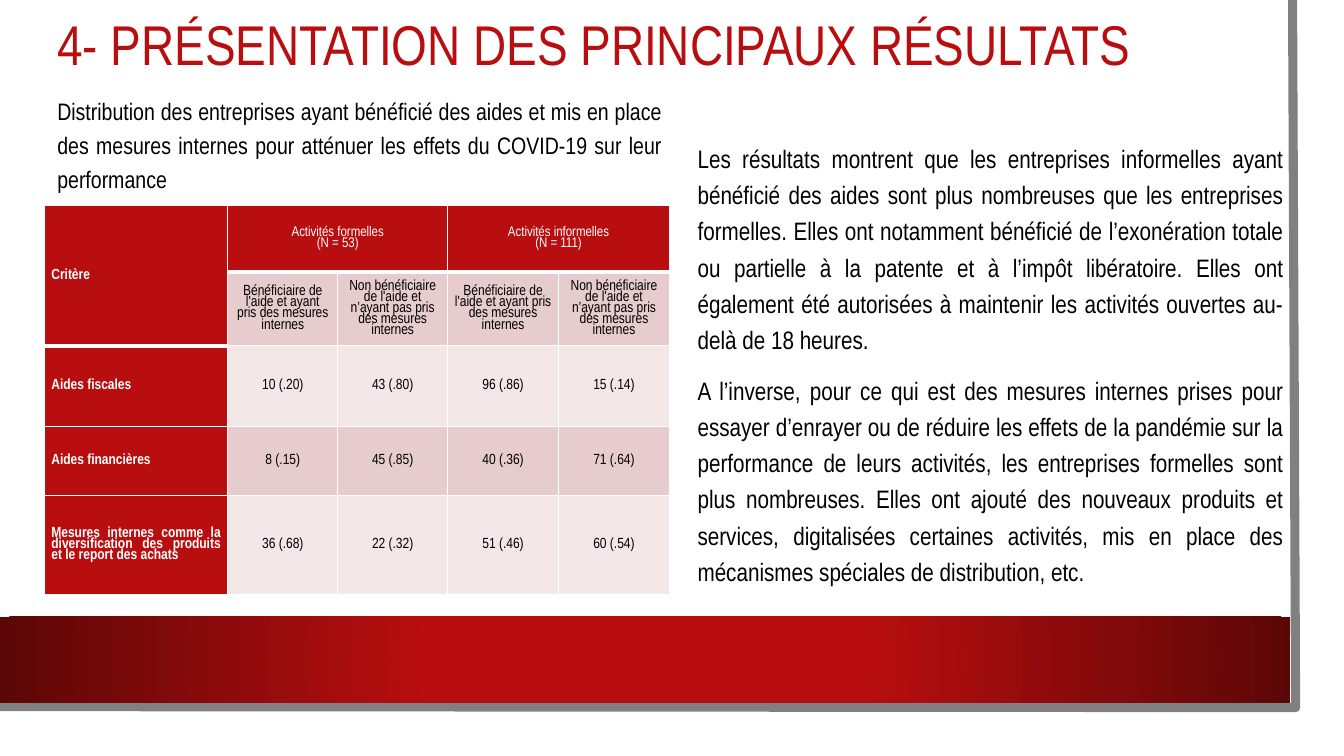
import pptx
import pptx.util
import pptx.dml.color
import pptx.enum.shapes
import pptx.enum.text
import pptx.oxml
import pptx.oxml.ns

PX = 9144  # 100 px to the inch
ALIGN = pptx.enum.text.PP_ALIGN
MIDDLE = pptx.enum.text.MSO_ANCHOR.MIDDLE
THEME = {
    "font": "Arial Narrow",
    "red": "B80E0F", "dark_red": "5C0707", "grey": "808080",
    "white": "FFFFFF", "black": "000000",
    "rose": "E6CCCC", "pale_rose": "F3E7E7",
    "title": 40, "body": 18, "caption": 17, "cell": 10.5, "group": 10,
}


def color(name):
    return pptx.dml.color.RGBColor.from_string(THEME[name])


def write(frame, *paragraphs, size, ink="black", bold=False,
          align=ALIGN.LEFT, spacing=1.0, gap=0, insets=(10, 5)):
    """Fill a text frame or table cell, one paragraph per string."""
    side, top = insets
    frame.margin_left = frame.margin_right = side * PX
    frame.margin_top = frame.margin_bottom = top * PX
    frame.vertical_anchor = MIDDLE
    frame.word_wrap = True
    text_frame = getattr(frame, "text_frame", frame)
    for index, text in enumerate(paragraphs):
        paragraph = text_frame.add_paragraph() if index else text_frame.paragraphs[0]
        paragraph.alignment = align
        paragraph.line_spacing = spacing
        paragraph.space_before = pptx.util.Pt(gap if index else 0)
        run = paragraph.add_run()
        run.text = text
        run.font.name = THEME["font"]
        run.font.size = pptx.util.Pt(THEME[size])
        run.font.bold = bold
        run.font.color.rgb = color(ink)


prs = pptx.Presentation()
prs.slide_width, prs.slide_height = 1333 * PX, 750 * PX
slide = prs.slides.add_slide(prs.slide_layouts[6])
shapes = slide.shapes

# Grey page edge and red footer band
outline = shapes.build_freeform(1282, 0, scale=PX)
outline.add_line_segments([(1285, 702), (-3, 701)], close=False)
page_edge = outline.convert_to_shape()
page_edge.shadow.inherit = False
page_edge.fill.background()
page_edge.line.color.rgb = color("grey")
page_edge.line.width = pptx.util.Pt(6.5)

footer = shapes.add_shape(pptx.enum.shapes.MSO_SHAPE.RECTANGLE, 0, 612 * PX, 1280 * PX, 85 * PX)
footer.shadow.inherit = False
footer.line.fill.background()
footer.fill.gradient()
gradient = footer._element.spPr.find(pptx.oxml.ns.qn("a:gradFill"))
gradient.getparent().replace(gradient, pptx.oxml.parse_xml(
    f'<a:gradFill {pptx.oxml.ns.nsdecls("a")} rotWithShape="1"><a:gsLst>'
    f'<a:gs pos="34000"><a:srgbClr val="{THEME["red"]}"/></a:gs>'
    f'<a:gs pos="100000"><a:srgbClr val="{THEME["dark_red"]}"/></a:gs></a:gsLst>'
    '<a:path path="circle"><a:fillToRect l="50000" t="50000" r="50000" b="50000"/></a:path>'
    '</a:gradFill>'))

# Title, caption and commentary
title = shapes.add_textbox(47 * PX, 29 * PX, 1137 * PX, 35 * PX)
write(title.text_frame, "4- PRÉSENTATION DES PRINCIPAUX RÉSULTATS",
      size="title", ink="red", spacing=0.9)

caption = shapes.add_textbox(47 * PX, 83 * PX, 620 * PX, 116 * PX)
write(caption.text_frame,
      "Distribution des entreprises ayant bénéficié des aides et mis en place des mesures "
      "internes pour atténuer les effets du COVID-19 sur leur performance",
      size="caption", align=ALIGN.JUSTIFY, spacing=1.2)

commentary = shapes.add_textbox(682 * PX, 96 * PX, 601 * PX, 526 * PX)
write(commentary.text_frame,
      "Les résultats montrent que les entreprises informelles ayant bénéficié des aides sont "
      "plus nombreuses que les entreprises formelles. Elles ont notamment bénéficié de "
      "l’exonération totale ou partielle à la patente et à l’impôt libératoire. Elles ont "
      "également été autorisées à maintenir les activités ouvertes au-delà de 18 heures.",
      "A l’inverse, pour ce qui est des mesures internes prises pour essayer d’enrayer ou de "
      "réduire les effets de la pandémie sur la performance de leurs activités, les "
      "entreprises formelles sont plus nombreuses. Elles ont ajouté des nouveaux produits et "
      "services, digitalisées certaines activités, mis en place des mécanismes spéciales de "
      "distribution, etc.",
      size="body", align=ALIGN.JUSTIFY, spacing=1.2, gap=10)

# Results table
helped = "Bénéficiaire de l'aide et ayant pris des mesures internes"
not_helped = "Non bénéficiaire de l'aide et n’ayant pas pris des mesures internes"
results = [
    ["Critère", "Activités formelles\n(N = 53)", "", "Activités informelles\n(N = 111)", ""],
    ["", helped, not_helped, helped, not_helped],
    ["Aides fiscales", "10 (.20)", "43 (.80)", "96 (.86)", "15 (.14)"],
    ["Aides financières", "8 (.15)", "45 (.85)", "40 (.36)", "71 (.64)"],
    ["Mesures internes comme la diversification des produits et le report des achats",
     "36 (.68)", "22 (.32)", "51 (.46)", "60 (.54)"],
]
column_widths = [182, 109, 109, 110, 110]
row_heights = [66, 73, 80, 69, 98]
table = shapes.add_table(len(row_heights), len(column_widths), 44 * PX, 204 * PX,
                         sum(column_widths) * PX, sum(row_heights) * PX).table
for column, width in zip(table.columns, column_widths):
    column.width = width * PX
for row, height in zip(table.rows, row_heights):
    row.height = height * PX

for r, row_texts in enumerate(results):
    for c, text in enumerate(row_texts):
        cell = table.cell(r, c)
        is_group, is_criterion = r == 0 and c > 0, c == 0
        heavy_bottom = r == 0 or (r == 1 and is_criterion)
        for side in "LRTB":
            points = 3 if side == "B" and heavy_bottom else 1
            cell._tc.get_or_add_tcPr().append(pptx.oxml.parse_xml(
                f'<a:ln{side} {pptx.oxml.ns.nsdecls("a")} w="{pptx.util.Pt(points)}"><a:solidFill>'
                f'<a:srgbClr val="{THEME["white"]}"/></a:solidFill></a:ln{side}>'))
        cell.fill.solid()
        band = "rose" if r % 2 else "pale_rose"
        cell.fill.fore_color.rgb = color("red" if is_group or is_criterion else band)
        if text:
            write(cell, *text.split("\n"),
                  size="group" if is_group else "cell",
                  ink="white" if is_group or is_criterion else "black",
                  bold=is_criterion,
                  align=ALIGN.JUSTIFY if is_criterion else ALIGN.CENTER,
                  spacing=0.82, insets=(7, 0))

table.cell(0, 0).merge(table.cell(1, 0))
for first in (1, 3):
    table.cell(0, first).merge(table.cell(0, first + 1))

prs.save("out.pptx")
